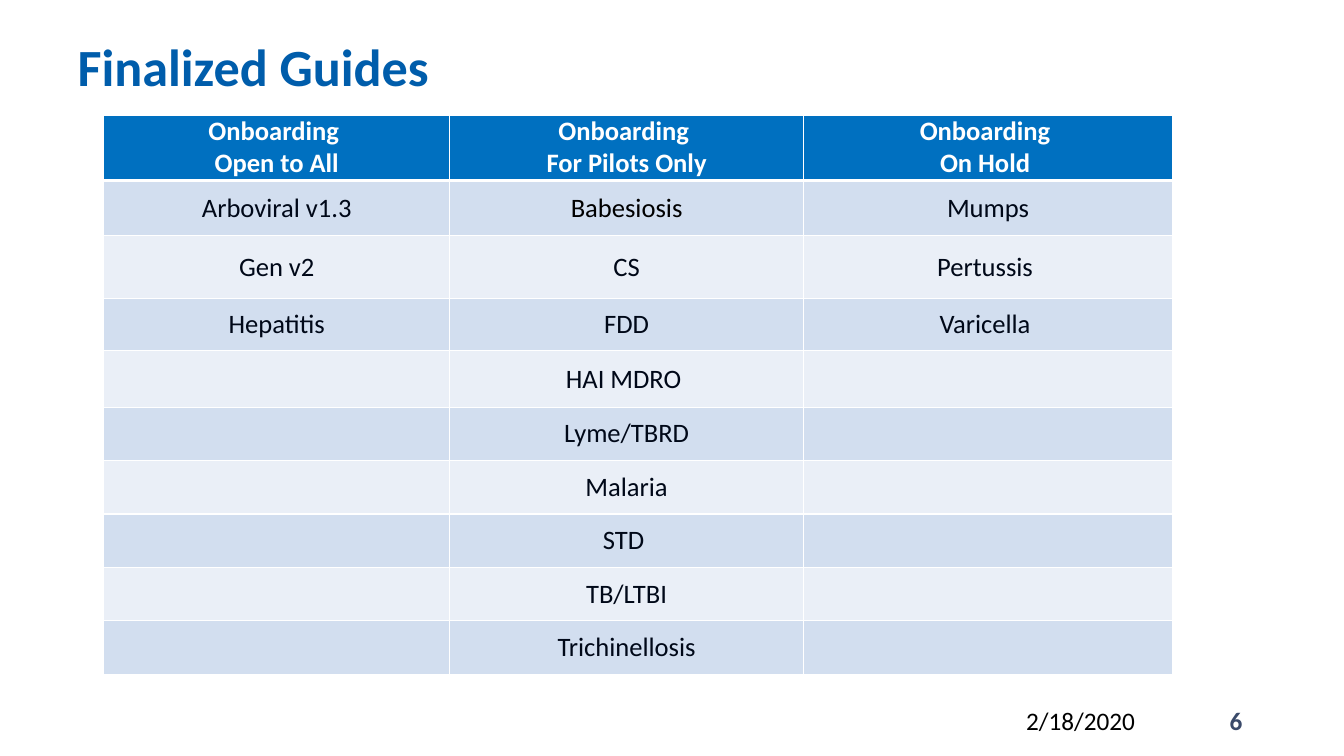
from dataclasses import dataclass
from lxml.etree import SubElement
from pptx import Presentation
from pptx.dml.color import RGBColor
from pptx.enum.text import MSO_ANCHOR, PP_ALIGN
from pptx.oxml.ns import qn
from pptx.util import Inches, Pt


@dataclass(frozen=True)
class Theme:
    face: str = "Calibri"
    title: str = "005DAB"
    head: str = "0070C0"
    bands: tuple = ("D2DEEF", "EAEFF7")
    white: str = "FFFFFF"
    ink: str = "000818"
    black: str = "000000"
    page: str = "3A4A6A"
    big: float = 37.3
    cell: float = 19
    foot: float = 18


class Deck:
    def __init__(self, theme):
        self.theme = theme
        self.file = Presentation()
        self.file.slide_width = Inches(13.33)
        self.file.slide_height = Inches(7.5)
        self.slide = self.file.slides.add_slide(self.file.slide_layouts[5])

    def style(self, frame, size, color, bold=False, align=PP_ALIGN.LEFT):
        for para in frame.paragraphs:
            para.alignment = align
            font = para.font
            font.name, font.size, font.bold = self.theme.face, Pt(size), bold
            font.color.rgb = RGBColor.from_string(color)

    def title(self, text, *box):
        shape = self.slide.shapes.title
        shape.left, shape.top, shape.width, shape.height = map(Inches, box)
        frame = shape.text_frame
        frame.text = text
        frame.vertical_anchor = MSO_ANCHOR.BOTTOM
        frame.paragraphs[0].line_spacing = Pt(40)
        self.style(frame, self.theme.big, self.theme.title, True)

    def label(self, text, box, color, bold=False, align=PP_ALIGN.LEFT):
        frame = self.slide.shapes.add_textbox(*map(Inches, box)).text_frame
        frame.word_wrap = True
        frame.vertical_anchor = MSO_ANCHOR.MIDDLE
        frame.text = text
        self.style(frame, self.theme.foot, color, bold, align)

    def border(self, cell, widths):
        props = cell._tc.get_or_add_tcPr()
        for side, width in zip("LRTB", widths):
            line = SubElement(props, qn(f"a:ln{side}"), w=str(Pt(width)))
            fill = SubElement(line, qn("a:solidFill"))
            SubElement(fill, qn("a:srgbClr"), val=self.theme.white)

    def cell(self, cell, text, row):
        theme = self.theme
        head = row == 0
        cell.text = text
        cell.vertical_anchor = MSO_ANCHOR.MIDDLE
        cell.margin_left = cell.margin_right = Inches(0.09)
        cell.margin_top = cell.margin_bottom = 0
        self.border(cell, (1, 1, 3 if row == 1 else 1, 3 if head else 1))
        cell.fill.solid()
        band = theme.head if head else theme.bands[(row - 1) % 2]
        cell.fill.fore_color.rgb = RGBColor.from_string(band)
        color = theme.white if head else theme.ink
        if text == "Babesiosis":
            color = theme.black
        self.style(cell.text_frame, theme.cell, color, head, PP_ALIGN.CENTER)

    def table(self, cols, left, top, widths, heights):
        size = sum(widths), sum(heights)
        grid = self.slide.shapes.add_table(
            len(heights), len(widths), *map(Inches, (left, top, *size))).table
        for row, height in enumerate(heights):
            grid.rows[row].height = Inches(height)
        for col, (width, texts) in enumerate(zip(widths, cols)):
            grid.columns[col].width = Inches(width)
            for row in range(len(heights)):
                text = texts[row] if row < len(texts) else ""
                self.cell(grid.cell(row, col), text, row)


def main():
    theme = Theme()
    deck = Deck(theme)
    deck.title("Finalized Guides", 0.67, 0.3, 12, 0.71)
    guides = [
        ["Onboarding \nOpen to All", "Arboviral v1.3", "Gen v2", "Hepatitis"],
        ["Onboarding \nFor Pilots Only", "Babesiosis", "CS", "FDD",
         "HAI MDRO ", "Lyme/TBRD", "Malaria", "STD ", "TB/LTBI",
         "Trichinellosis"],
        ["Onboarding \nOn Hold ", "Mumps", "Pertussis ", "Varicella "],
    ]
    heights = [0.65, 0.55, 0.62, 0.52, 0.56] + [0.53] * 5
    deck.table(guides, 1.03, 1.14, [3.43, 3.51, 3.66], heights)
    deck.label("6", (9.42, 6.95, 3, 0.4), theme.page, True, PP_ALIGN.RIGHT)
    deck.label("2/18/2020", (10.08, 6.95, 1.68, 0.4), theme.black)
    deck.file.save("out.pptx")


if __name__ == "__main__":
    main()
